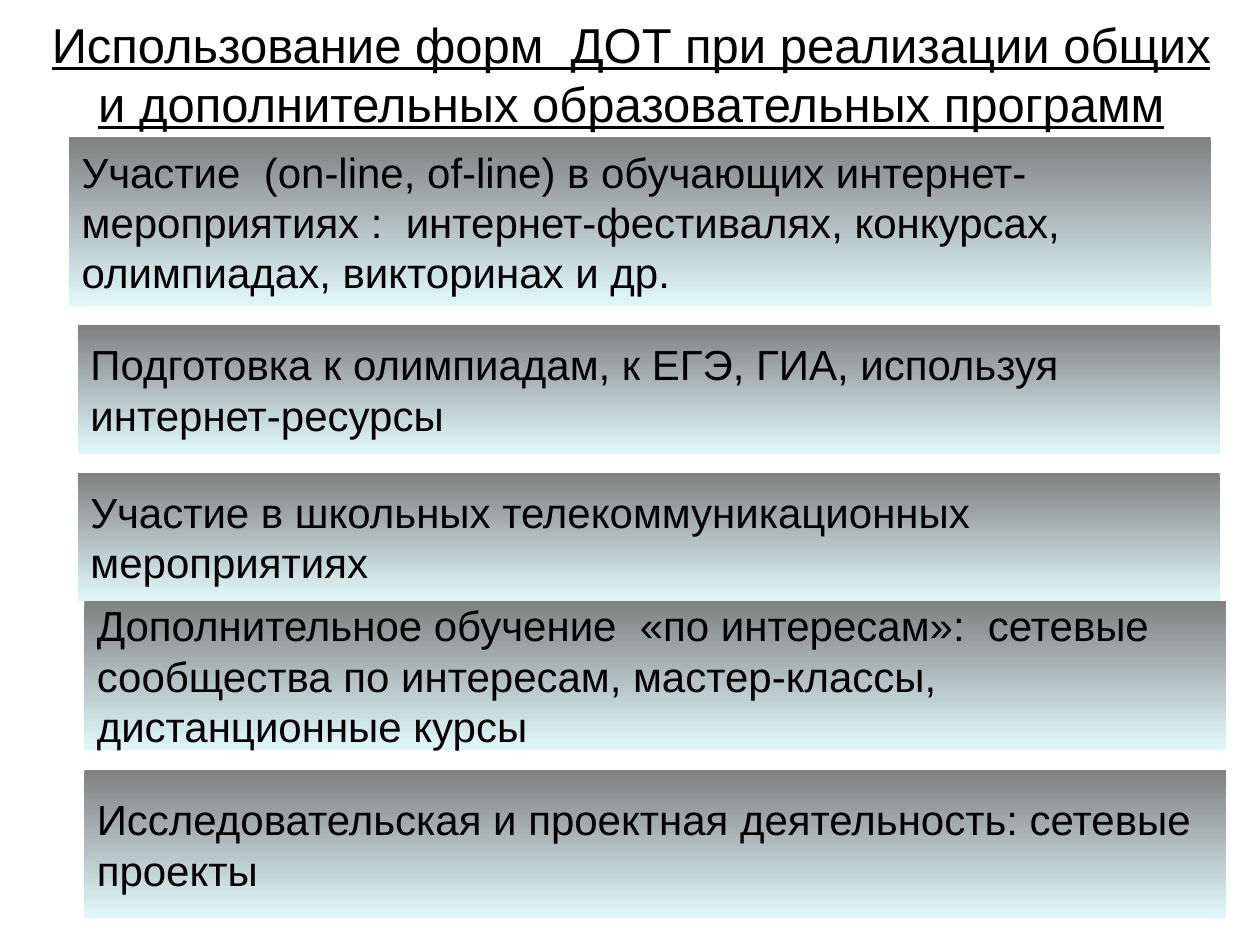
from pptx import Presentation
from pptx.dml.color import RGBColor
from pptx.enum.shapes import MSO_SHAPE
from pptx.enum.text import MSO_ANCHOR, MSO_AUTO_SIZE, PP_ALIGN
from pptx.util import Inches, Pt

COLORS = {"text": "000000", "band_top": "808080", "band_bottom": "DFF6F8"}
TITLE = "Использование форм  ДОТ при реализации общих и дополнительных образовательных программ"
BAND_WIDTH = 9.06
# left, top, height, text
BANDS = [
    (0.55, 1.09, 1.34, "Участие  (on-line, of-line) в обучающих интернет-мероприятиях :  "
                       "интернет-фестивалях, конкурсах, олимпиадах, викторинах и др."),
    (0.62, 2.58, 1.02, "Подготовка к олимпиадам, к ЕГЭ, ГИА, используя интернет-ресурсы"),
    (0.62, 3.75, 1.02, "Участие в школьных телекоммуникационных мероприятиях"),
    (0.67, 4.77, 1.18, "Дополнительное обучение  «по интересам»:  сетевые сообщества "
                       "по интересам, мастер-классы, дистанционные курсы"),
    (0.67, 6.11, 1.18, "Исследовательская и проектная деятельность: сетевые проекты"),
]


class SlideBuilder:
    def __init__(self, slide):
        self.slide = slide
        self.font = {"name": "Arial"}

    def set_text(self, shape, text, alignment, **font_format):
        frame = shape.text_frame
        frame.text = text
        frame_format = {"word_wrap": True, "auto_size": MSO_AUTO_SIZE.NONE,
                        "vertical_anchor": MSO_ANCHOR.MIDDLE}
        for name, value in frame_format.items():
            setattr(frame, name, value)
        paragraph = frame.paragraphs[0]
        paragraph.alignment = alignment
        font = paragraph.runs[0].font
        for name, value in {**self.font, **font_format}.items():
            setattr(font, name, value)
        font.color.rgb = RGBColor.from_string(COLORS["text"])

    def title(self, text, left, top, width, height):
        shape = self.slide.shapes.title
        box = {"left": left, "top": top, "width": width, "height": height}
        for name, value in box.items():
            setattr(shape, name, Inches(value))
        self.set_text(shape, text, PP_ALIGN.CENTER, size=Pt(28), underline=True)

    def band(self, text, left, top, width, height):
        """Add a borderless rectangle shaded from top to bottom."""
        shape = self.slide.shapes.add_shape(
            MSO_SHAPE.RECTANGLE, *map(Inches, (left, top, width, height)))
        shape.shadow.inherit = False
        shape.line.fill.background()
        shape.fill.gradient()
        shape.fill.gradient_angle = 270
        stops = ((0, "band_top"), (0.98, "band_bottom"))
        for stop, (position, color) in zip(shape.fill.gradient_stops, stops):
            stop.position = position
            stop.color.rgb = RGBColor.from_string(COLORS[color])
        self.set_text(shape, text, PP_ALIGN.LEFT, size=Pt(24))


def main():
    presentation = Presentation()
    presentation.slide_width = Inches(10)
    presentation.slide_height = Inches(7.5)
    title_only = presentation.slide_layouts[5]
    builder = SlideBuilder(presentation.slides.add_slide(title_only))
    builder.title(TITLE, 0.23, 0.23, 9.56, 0.7)
    for left, top, height, text in BANDS:
        builder.band(text, left, top, BAND_WIDTH, height)
    presentation.save("out.pptx")


if __name__ == "__main__":
    main()
